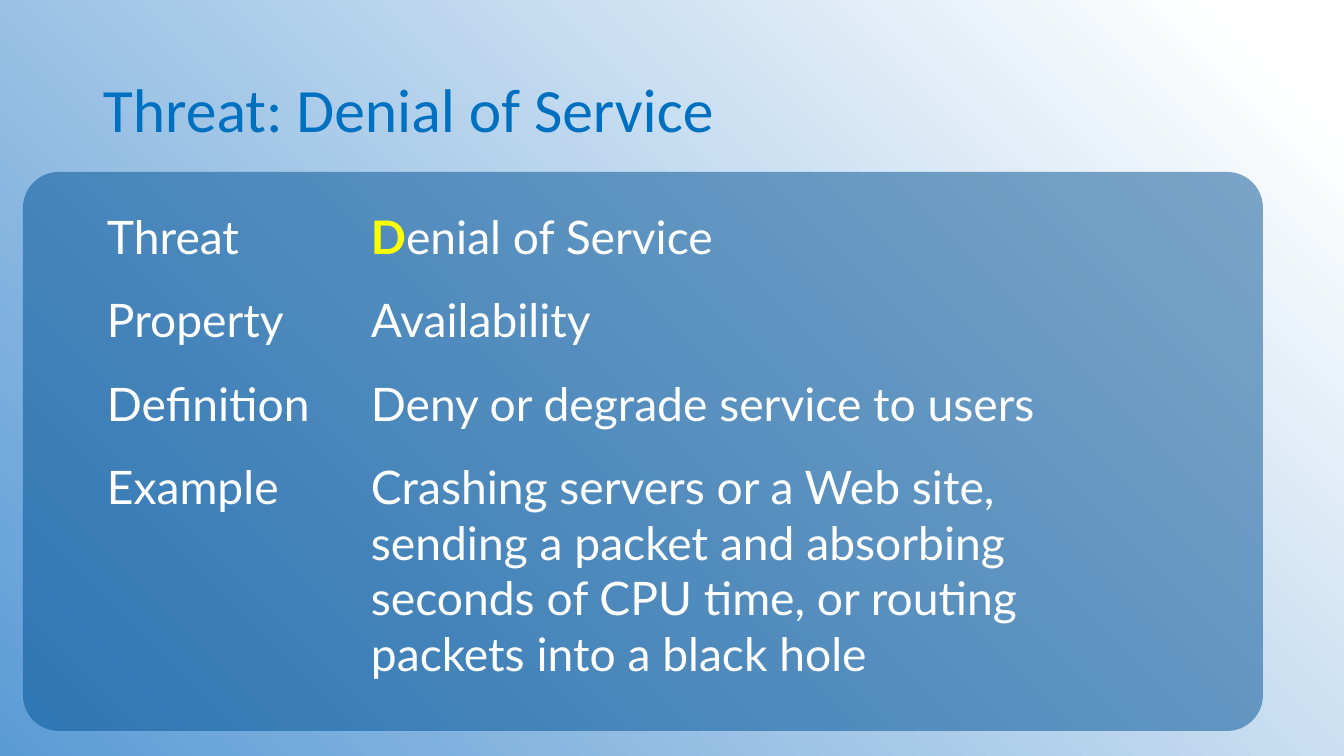
from lxml import etree
from pptx import Presentation
from pptx.dml.color import RGBColor
from pptx.enum.shapes import MSO_SHAPE
from pptx.enum.text import MSO_ANCHOR
from pptx.oxml.ns import qn
from pptx.util import Emu, Pt

ROUNDED = MSO_SHAPE.ROUNDED_RECTANGLE
MIDDLE = MSO_ANCHOR.MIDDLE
EMU_PER_PX = 12192000 / 1344
NO_GRID_STYLE = "{2D5ABB26-0587-4C30-8999-92F81FD0307C}"

COLORS = {
    "white": "FFFFFF",
    "sky": "5B9BD5",
    "panel": "005194",
    "title": "0070C0",
    "initial": "FFFF00",
}
TITLE_FONT = {"name": "Calibri", "size": Pt(44), "bold": False}
BODY_FONT = {"name": "Lato", "size": Pt(33), "bold": False}
INITIAL_FONT = {**BODY_FONT, "bold": True}

COLUMN_WIDTHS = [264, 767]
ROW_HEIGHTS = [83, 83, 83, 248]
THREAT_ROWS = [
    ("Threat", "Denial of Service"),
    ("Property", "Availability"),
    ("Definition", "Deny or degrade service to users"),
    ("Example", "Crashing servers or a Web site, sending a packet and absorbing "
                "seconds of CPU time, or routing packets into a black hole"),
]


def px(length):
    return Emu(round(length * EMU_PER_PX))


def rgb(color):
    return RGBColor.from_string(COLORS[color])


def set_values(target, values):
    for name, value in values.items():
        setattr(target, name, value)


def add_run(paragraph, text, font, color):
    run = paragraph.add_run()
    run.text = text
    set_values(run.font, font)
    run.font.color.rgb = rgb(color)


def paint_background(slide):
    fill = slide.background.fill
    fill.gradient()
    fill.gradient_angle = 225
    for stop, (position, color) in zip(fill.gradient_stops, [(0.06, "white"), (1, "sky")]):
        stop.position = position
        stop.color.rgb = rgb(color)


def add_panel(slide, left, top, width, height):
    panel = slide.shapes.add_shape(ROUNDED, px(left), px(top), px(width), px(height))
    panel.adjustments[0] = 0.064
    panel.shadow.inherit = False
    panel.line.fill.background()
    panel.fill.solid()
    panel.fill.fore_color.rgb = rgb("panel")
    tint = panel.fill._xPr.find(".//" + qn("a:srgbClr"))
    etree.SubElement(tint, qn("a:alpha"), val="50000")


def add_title(slide, text, left, top, width, height):
    title = slide.shapes.add_textbox(px(left), px(top), px(width), px(height))
    set_values(title.text_frame, {"word_wrap": True, "vertical_anchor": MIDDLE})
    paragraph = title.text_frame.paragraphs[0]
    paragraph.line_spacing = 0.9
    add_run(paragraph, text, TITLE_FONT, "title")


def add_threat_table(slide, left, top):
    frame = slide.shapes.add_table(
        len(ROW_HEIGHTS), len(COLUMN_WIDTHS), px(left), px(top),
        px(sum(COLUMN_WIDTHS)), px(sum(ROW_HEIGHTS)))
    table = frame.table
    set_values(table, {"first_row": False, "horz_banding": False})
    table._tbl.tblPr.find(qn("a:tableStyleId")).text = NO_GRID_STYLE
    for column, width in zip(table.columns, COLUMN_WIDTHS):
        column.width = px(width)
    for row, height, texts in zip(table.rows, ROW_HEIGHTS, THREAT_ROWS):
        row.height = px(height)
        for cell, text in zip(row.cells, texts):
            cell.fill.background()
            for side in ("left", "right", "top", "bottom"):
                setattr(cell, f"margin_{side}", px(14))
            paragraph = cell.text_frame.paragraphs[0]
            if text == "Denial of Service":
                add_run(paragraph, text[0], INITIAL_FONT, "initial")
                text = text[1:]
            add_run(paragraph, text, BODY_FONT, "white")


def main():
    deck = Presentation()
    set_values(deck, {"slide_width": px(1344), "slide_height": px(756)})
    slide = deck.slides.add_slide(deck.slide_layouts[6])
    paint_background(slide)
    add_panel(slide, 23, 172, 1240, 559)
    add_title(slide, "Threat: Denial of Service", 93, 40, 1159, 146)
    add_threat_table(slide, 93, 195)
    deck.save("out.pptx")


if __name__ == "__main__":
    main()
